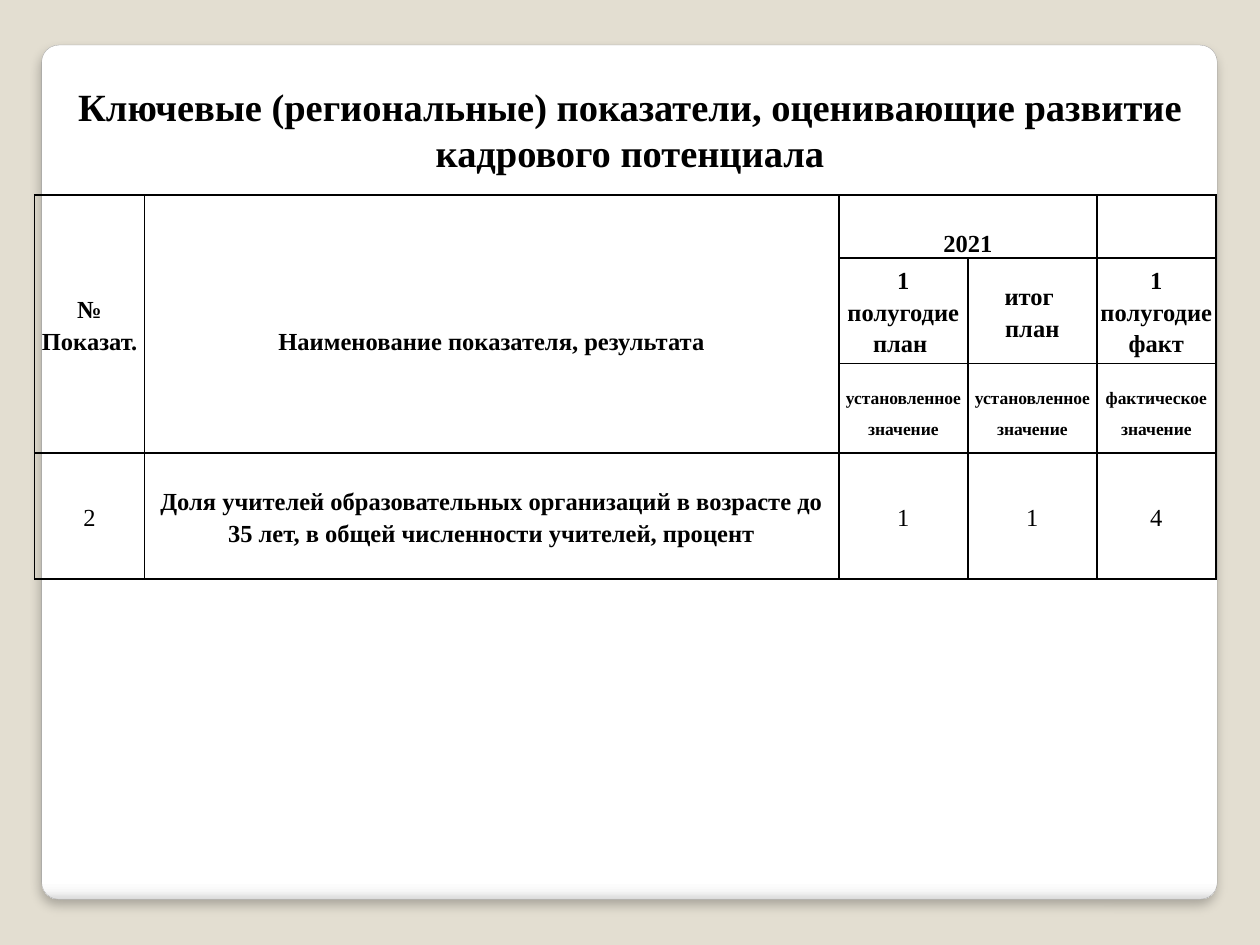
"""Slide with a table of regional staff development indicators."""
from lxml.etree import SubElement as Sub
from pptx import Presentation
from pptx.dml.color import RGBColor as Rgb
from pptx.enum.shapes import MSO_SHAPE as Kind
from pptx.enum.text import MSO_ANCHOR as Anchor, PP_ALIGN as Align
from pptx.oxml import parse_xml
from pptx.oxml.ns import nsdecls, qn
from pptx.util import Cm, Pt

HUES = {"back": "E3DED1", "edge": "A4A4A4", "ink": "000000"}
FADE = [(0, "FFFFFF"), (98, "FFFFFF"), (99, "F7F7F7"), (100, "DADADA")]
FONT = "Times New Roman"


def style(par, size, bold):
    par.alignment = Align.CENTER
    font = par.font
    font.name, font.size, font.bold = FONT, Pt(size), bold
    font.color.rgb = Rgb.from_string(HUES["ink"])


def border(cell):
    props = cell._tc.get_or_add_tcPr()
    for i, side in enumerate(("lnL", "lnR", "lnT", "lnB")):
        line = parse_xml(
            f'<a:{side} {nsdecls("a")} w="12700"><a:solidFill>'
            f'<a:srgbClr val="{HUES["ink"]}"/></a:solidFill></a:{side}>')
        props.insert(i, line)


deck = Presentation()
deck.slide_width, deck.slide_height = Cm(25.4), Cm(19.05)
slide = deck.slides.add_slide(deck.slide_layouts[6])
back = slide.background.fill
back.solid()
back.fore_color.rgb = Rgb.from_string(HUES["back"])

panel = slide.shapes.add_shape(
    Kind.ROUNDED_RECTANGLE, Cm(0.84), Cm(0.91), Cm(23.7), Cm(17.22))
panel.adjustments[0] = 0.02
panel.line.color.rgb = Rgb.from_string(HUES["edge"])
panel.line.width = Pt(0.16)
panel.fill.gradient()
panel.fill.gradient_angle = 270
stops = panel.fill._fill._gradFill.find(qn("a:gsLst"))
stops.clear()
for pos, hue in FADE:
    stop = Sub(stops, qn("a:gs"), pos=str(pos * 1000))
    Sub(stop, qn("a:srgbClr"), val=hue)
panel._element.spPr.append(parse_xml(
    f'<a:effectLst {nsdecls("a")}><a:outerShdw blurRad="76200" dist="50800" '
    f'dir="5400000" rotWithShape="0"><a:srgbClr val="{HUES["ink"]}">'
    '<a:alpha val="25000"/></a:srgbClr></a:outerShdw></a:effectLst>'))

title = slide.shapes.add_textbox(0, 0, Cm(25.4), Cm(5.92)).text_frame
title.word_wrap = True
title.vertical_anchor = Anchor.BOTTOM
title.margin_bottom = Cm(2.39)
head = title.paragraphs[0]
head.text = "Ключевые (региональные) показатели, оценивающие развитие кадрового потенциала"
style(head, 22, True)

COLS = [2.21, 14, 2.6, 2.6, 2.4]
ROWS = [1.27, 2.13, 1.8, 2.54]
CELLS = [
    ["№\nПоказат.", "Наименование показателя, результата", "2021", "", ""],
    ["", "", "1 полугодие план ", "итог \nплан", "1 полугодие факт"],
    ["", "", "установленное значение", "установленное значение",
     "фактическое значение"],
    ["2", "Доля учителей образовательных организаций в возрасте до 35 лет, "
     "в общей численности учителей, процент", "1", "1", "4"],
]
LOW = [(0, 1), (0, 2)]

table = slide.shapes.add_table(
    len(ROWS), len(COLS), Cm(0.7), Cm(3.93), Cm(sum(COLS)), Cm(sum(ROWS))).table
table.first_row = table.horz_banding = False
for col, width in zip(table.columns, COLS):
    col.width = Cm(width)
for row, height in zip(table.rows, ROWS):
    row.height = Cm(height)
for r, texts in enumerate(CELLS):
    for c, text in enumerate(texts):
        cell = table.cell(r, c)
        cell.text = text
        cell.fill.background()
        cell.vertical_anchor = Anchor.MIDDLE
        cell.margin_left = cell.margin_right = Cm(0.05)
        cell.margin_top = Cm(0.63) if (r, c) in LOW else 0
        cell.margin_bottom = 0
        border(cell)
        for par in cell.text_frame.paragraphs:
            style(par, 10 if r == 2 else 14, r < 3 or c == 1)
            par.line_spacing = Pt(18)
for c in (0, 1):
    table.cell(0, c).merge(table.cell(2, c))
table.cell(0, 2).merge(table.cell(0, 3))

deck.save("out.pptx")
